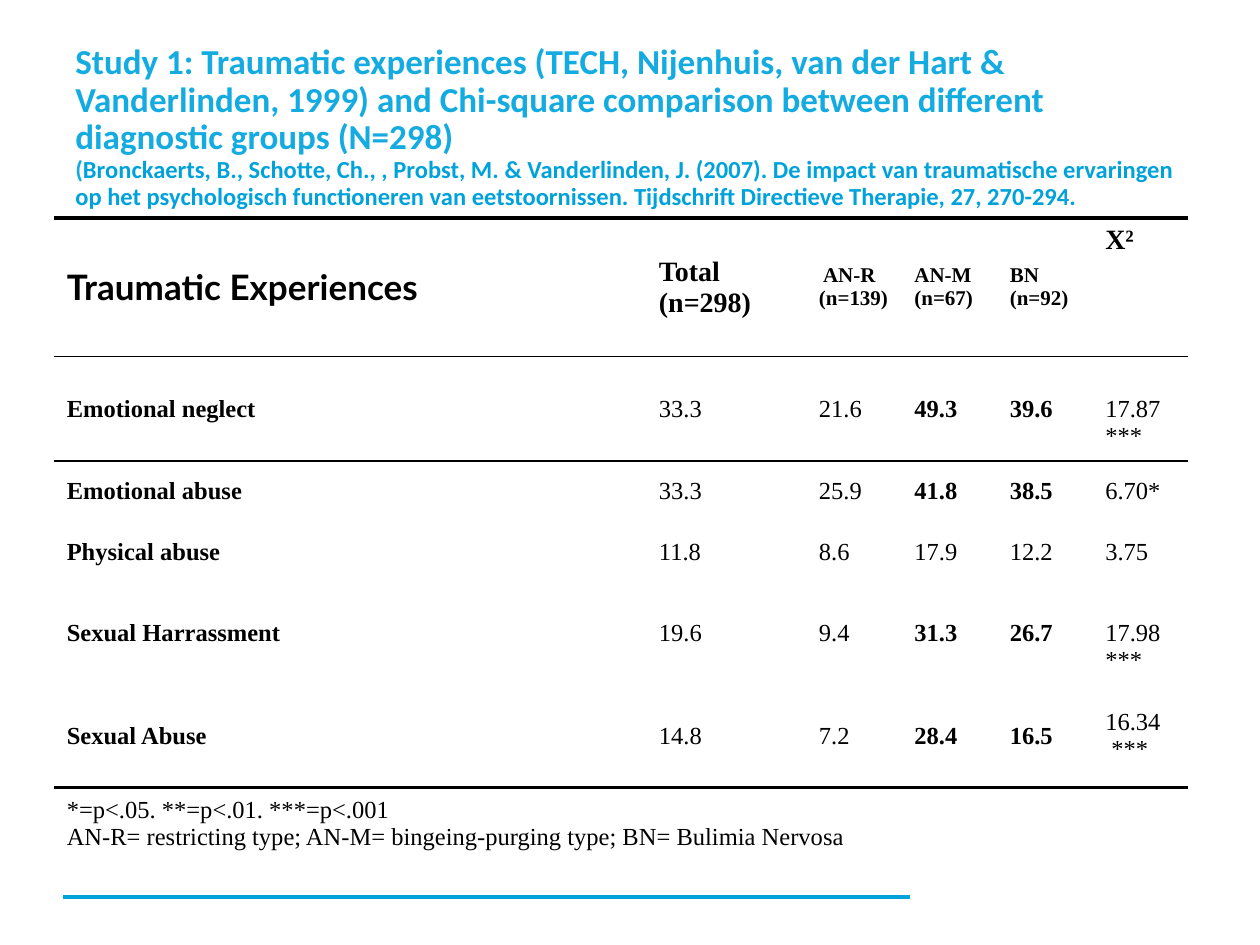
from dataclasses import dataclass

import pptx
import pptx.dml.color
import pptx.enum.shapes
import pptx.enum.text
import pptx.oxml
import pptx.oxml.ns
import pptx.util

# Slide grid: 100 columns by 75 rows
WIDTH, HEIGHT = pptx.util.Inches(10), pptx.util.Inches(7.5)
COLS, ROWS = 100, 75

SKY, BLUE, BLACK = "14ABE0", "00A2DB", "000000"
SERIF = "Times New Roman"
NO_STYLE = "{2D5ABB26-0587-4C30-8999-92F81FD0307C}"
ANCHOR = pptx.enum.text.MSO_ANCHOR
ALIGN = pptx.enum.text.PP_ALIGN


@dataclass
class Entry:
    """Text of one table cell; each line is a paragraph."""
    text: str
    size: float = 14
    bold: bool = False
    font: str = SERIF
    align: ALIGN = ALIGN.JUSTIFY
    anchor: ANCHOR = ANCHOR.MIDDLE
    drop: float = 0  # extra top margin, in grid rows


@dataclass
class Experience:
    """One data row: height in grid rows, percentages and chi-square."""
    name: str
    height: float
    values: tuple[str, ...]
    chi: str
    raised: bool = False  # AN-M and BN in bold
    drop: float = 0

    def entries(self) -> list[Entry]:
        return ([Entry(self.name, bold=True)]
                + [Entry(v, bold=self.raised and i >= 2)
                   for i, v in enumerate(self.values)]
                + [Entry(self.chi, drop=self.drop)])


HEADER_HEIGHT, NOTE_HEIGHT = 11, 5.7
HEADER = [
    Entry("Traumatic Experiences", 20, True, "Lato", ALIGN.LEFT),
    Entry("Total\n(n=298)", 16, True),
    Entry(" AN-R\n(n=139)", 12, True),
    Entry("AN-M\n(n=67)", 12, True),
    Entry("BN\n(n=92)", 12, True),
    Entry("X²", 16, True, anchor=ANCHOR.TOP),
]
EXPERIENCES = [
    Experience("Emotional neglect", 8.3, ("33.3", "21.6", "49.3", "39.6"),
               "17.87\n***", True, 2.2),
    Experience("Emotional abuse", 4.8, ("33.3", "25.9", "41.8", "38.5"),
               "6.70*", True),
    Experience("Physical abuse", 4.8, ("11.8", "8.6", "17.9", "12.2"), "3.75"),
    Experience("Sexual Harrassment", 8.1, ("19.6", "9.4", "31.3", "26.7"),
               "17.98\n***", True, 2.2),
    Experience("Sexual Abuse", 8.2, ("14.8", "7.2", "28.4", "16.5"),
               "16.34\n ***", True),
]
NOTE = Entry("*=p<.05. **=p<.01. ***=p<.001\n"
             "AN-R= restricting type; AN-M= bingeing-purging type; "
             "BN= Bulimia Nervosa", align=ALIGN.LEFT)


def x(cols: float) -> int:
    return round(WIDTH * cols / COLS)


def y(rows: float) -> int:
    return round(HEIGHT * rows / ROWS)


def rgb(color: str) -> pptx.dml.color.RGBColor:
    return pptx.dml.color.RGBColor.from_string(color)


def set_font(font, name: str, size: float, bold: bool) -> None:
    font.name, font.size, font.bold = name, pptx.util.Pt(size), bold


def add_title(slide) -> None:
    tf = slide.shapes.add_textbox(x(5), y(3), x(90), y(12.5)).text_frame
    tf.word_wrap = True
    paragraphs = [
        (20, [("Study 1: Traumatic experiences (TECH, Nijenhuis, van der Hart "
               "& Vanderlinden, 1999) and Chi-square comparison between "
               "different diagnostic groups (N=298)", SKY)]),
        (14, [("(", SKY),
              ("Bronckaerts, B., Schotte, Ch., , Probst, M. & Vanderlinden, J. "
               "(2007). De impact van traumatische ervaringen op het "
               "psychologisch functioneren van eetstoornissen. Tijdschrift "
               "Directieve Therapie, 27, 270-294.", BLUE)]),
    ]
    for i, (size, runs) in enumerate(paragraphs):
        p = tf.add_paragraph() if i else tf.paragraphs[0]
        p.line_spacing = 0.9
        set_font(p.font, "Calibri", size, True)
        for text, color in runs:
            r = p.add_run()
            r.text = text
            r.font.color.rgb = rgb(color)


def fill_cell(cell, entry: Entry) -> None:
    cell.fill.background()
    cell.vertical_anchor = entry.anchor
    cell.margin_right = x(0.5)
    cell.margin_top = y(0.5 + entry.drop)
    cell.text = entry.text
    for p in cell.text_frame.paragraphs:
        p.alignment = entry.align
        set_font(p.font, entry.font, entry.size, entry.bold)
        p.font.color.rgb = rgb(BLACK)


def add_rule(table, row: int, width: float) -> None:
    """Draw a horizontal rule along the top of a table row."""
    sides = [(row, "lnT")] + ([(row - 1, "lnB")] if row else [])
    for r, tag in sides:
        for col in range(len(table.columns)):
            tc_pr = table.cell(r, col)._tc.get_or_add_tcPr()
            ln = pptx.oxml.parse_xml(
                f'<a:{tag} {pptx.oxml.ns.nsdecls("a")} w="{pptx.util.Pt(width)}">'
                f'<a:solidFill><a:srgbClr val="{BLACK}"/></a:solidFill></a:{tag}>')
            tc_pr.insert(1 if tag == "lnB" and tc_pr.find(
                pptx.oxml.ns.qn("a:lnT")) is not None else 0, ln)


def add_results(slide) -> None:
    grid = [HEADER] + [e.entries() for e in EXPERIENCES]
    heights = [HEADER_HEIGHT] + [e.height for e in EXPERIENCES] + [NOTE_HEIGHT]
    total, name, overall = 90, 47, 12.7
    widths = [name, overall] + [(total - name - overall) / 4] * 4

    table = slide.shapes.add_table(len(heights), len(widths), x(4.3), y(17.3),
                                   x(total), y(sum(heights))).table
    table.first_row = table.horz_banding = False
    table._tbl.tblPr.find(pptx.oxml.ns.qn("a:tableStyleId")).text = NO_STYLE
    for column, width in zip(table.columns, widths):
        column.width = x(width)
    for row, height in zip(table.rows, heights):
        row.height = y(height)

    for i, entries in enumerate(grid):
        for j, entry in enumerate(entries):
            fill_cell(table.cell(i, j), entry)

    # Note across the last row
    last = len(grid)
    table.cell(last, 0).merge(table.cell(last, len(widths) - 1))
    fill_cell(table.cell(last, 0), NOTE)

    for row, width in ((0, 2), (1, 1), (last, 2)):
        add_rule(table, row, width)


def add_footer_line(slide) -> None:
    line = slide.shapes.add_connector(pptx.enum.shapes.MSO_CONNECTOR.STRAIGHT,
                                      x(5), y(71.2), x(72.2), y(71.2))
    line.line.color.rgb = rgb(BLUE)
    line.line.width = pptx.util.Pt(2.2)
    line._element.spPr.append(pptx.oxml.parse_xml(
        f'<a:effectLst {pptx.oxml.ns.nsdecls("a")}/>'))


def main() -> None:
    prs = pptx.Presentation()
    prs.slide_width, prs.slide_height = WIDTH, HEIGHT
    slide = prs.slides.add_slide(prs.slide_layouts[6])
    add_footer_line(slide)
    add_title(slide)
    add_results(slide)
    prs.save("out.pptx")


if __name__ == "__main__":
    main()
